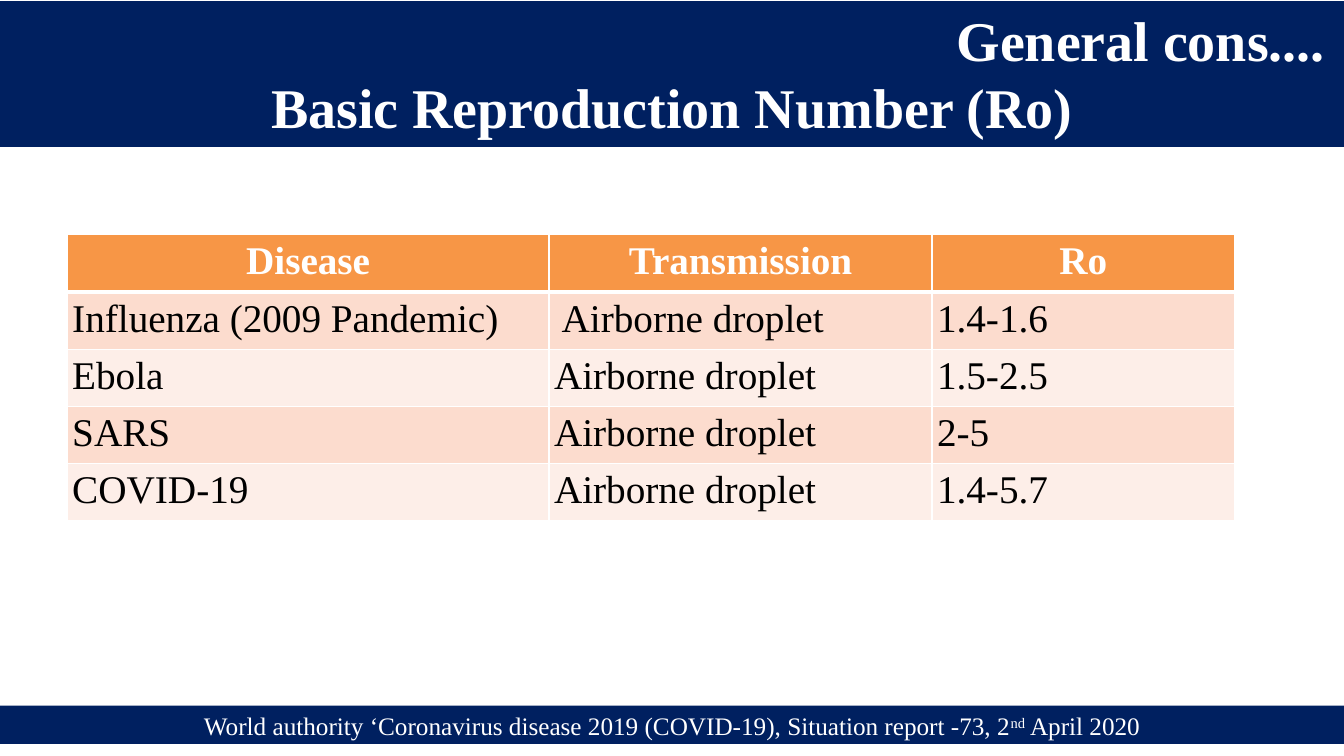
from lxml.etree import SubElement
from pptx import Presentation
from pptx.dml.color import RGBColor
from pptx.enum.shapes import MSO_SHAPE as Shape
from pptx.enum.text import MSO_ANCHOR as Anchor, MSO_AUTO_SIZE as AutoSize, PP_ALIGN as Align
from pptx.oxml.ns import qn
from pptx.util import Inches, Pt

NAVY, WHITE, BLACK = "002060", "FFFFFF", "000000"
ORANGE, PEACH, PALE_PEACH = "F79646", "FCDCCE", "FDEEE8"
COLUMNS, ROWS = 40, 75
INSET = Inches(0.05)

DISEASES = [
    ("Disease", "Transmission", "Ro"),
    ("Influenza (2009 Pandemic)", " Airborne droplet", "1.4-1.6"),
    ("Ebola", "Airborne droplet", "1.5-2.5"),
    ("SARS", "Airborne droplet", "2-5"),
    ("COVID-19", "Airborne droplet", "1.4-5.7"),
]


def color(hex_code):
    """Turn a hex string into a colour."""
    return RGBColor.from_string(hex_code)


def paint(target, hex_code):
    """Give a shape or cell a solid fill."""
    target.fill.solid()
    target.fill.fore_color.rgb = color(hex_code)


class ReproductionSlide:
    """Hold the slide, its grid and its text style."""

    font = "Times New Roman"

    def __init__(self, deck):
        """Add a title-only slide and work out the grid."""
        self.slide = deck.slides.add_slide(deck.slide_layouts[5])
        self.column = deck.slide_width / COLUMNS
        self.row = deck.slide_height / ROWS

    def area(self, left, top, width, height):
        """Turn grid columns and rows into lengths."""
        return (int(left * self.column), int(top * self.row),
                int(width * self.column), int(height * self.row))

    def style(self, paragraph, size, hex_code, align, bold=False):
        """Align a paragraph and format its runs."""
        paragraph.alignment = align
        for run in paragraph.runs:
            run.font.name, run.font.size, run.font.bold = self.font, Pt(size), bold
            run.font.color.rgb = color(hex_code)

    def frame(self, band, anchor):
        """Set the margins and fitting of a band's text."""
        frame = band.text_frame
        frame.margin_left = frame.margin_right = INSET
        frame.margin_top = frame.margin_bottom = INSET
        frame.word_wrap = True
        frame.auto_size = AutoSize.SHAPE_TO_FIT_TEXT
        frame.vertical_anchor = anchor
        return frame

    def title(self, lines, aligns, area):
        """Fill the title placeholder as a navy band."""
        heading = self.slide.shapes.title
        heading.left, heading.top, heading.width, heading.height = self.area(*area)
        paint(heading, NAVY)
        heading.line.color.rgb = color(NAVY)
        heading.line.width = Pt(2.25)
        frame = self.frame(heading, Anchor.BOTTOM)
        frame.text = "\n".join(lines)
        for paragraph, align in zip(frame.paragraphs, aligns):
            self.style(paragraph, 40, WHITE, align, bold=True)

    def border(self, cell, widths):
        """Draw white borders on a cell, widths in points by side."""
        properties = cell._tc.get_or_add_tcPr()
        for side, width in widths.items():
            edge = SubElement(properties, qn(f"a:ln{side}"), w=str(Pt(width)))
            SubElement(SubElement(edge, qn("a:solidFill")), qn("a:srgbClr"), val=WHITE)

    def table(self, records, left, top, widths, row_height):
        """Add a table with a header and two alternating row colours."""
        area = self.area(left, top, sum(widths), row_height * len(records))
        grid = self.slide.shapes.add_table(len(records), len(widths), *area).table
        for column, width in zip(grid.columns, widths):
            column.width = int(width * self.column)
        for index, record in enumerate(records):
            grid.rows[index].height = int(row_height * self.row)
            header = index == 0
            fill = ORANGE if header else (PALE_PEACH, PEACH)[index % 2]
            edges = {"L": 1, "R": 1, "T": 3 if index == 1 else 1, "B": 3 if header else 1}
            for position, value in enumerate(record):
                cell = grid.cell(index, position)
                cell.text_frame.text = value
                cell.margin_left = cell.margin_right = INSET
                cell.margin_top = cell.margin_bottom = INSET
                self.border(cell, edges)
                paint(cell, fill)
                self.style(cell.text_frame.paragraphs[0], 28, WHITE if header else BLACK,
                           Align.CENTER if header else Align.LEFT, bold=header)

    def citation(self, before, raised, after, area):
        """Add the bottom band with a superscript inside its text."""
        band = self.slide.shapes.add_shape(Shape.RECTANGLE, *self.area(*area))
        band.shadow.inherit = False
        paint(band, NAVY)
        band.line.fill.background()
        source = self.frame(band, Anchor.TOP).paragraphs[0]
        source.text = before
        ordinal, date = source.add_run(), source.add_run()
        ordinal.text, date.text = raised, after
        self.style(source, 18, WHITE, Align.CENTER)
        ordinal._r.get_or_add_rPr().set("baseline", "30000")


def main():
    """Build and save the slide."""
    deck = Presentation()
    deck.slide_width, deck.slide_height = Inches(13.33), Inches(7.5)
    page = ReproductionSlide(deck)
    page.title(["General cons.... ", "Basic Reproduction Number (Ro)"],
               [Align.RIGHT, Align.CENTER], (0, 0.3, COLUMNS, 14.1))
    page.table(DISEASES, 2, 23.3, (14.34, 11.4, 9), 5.66)
    page.citation("World authority ‘Coronavirus disease 2019 (COVID-19), Situation report -73, 2",
                  "nd", " April 2020", (0, 70, COLUMNS, 3.8))
    deck.save("out.pptx")


if __name__ == "__main__":
    main()
